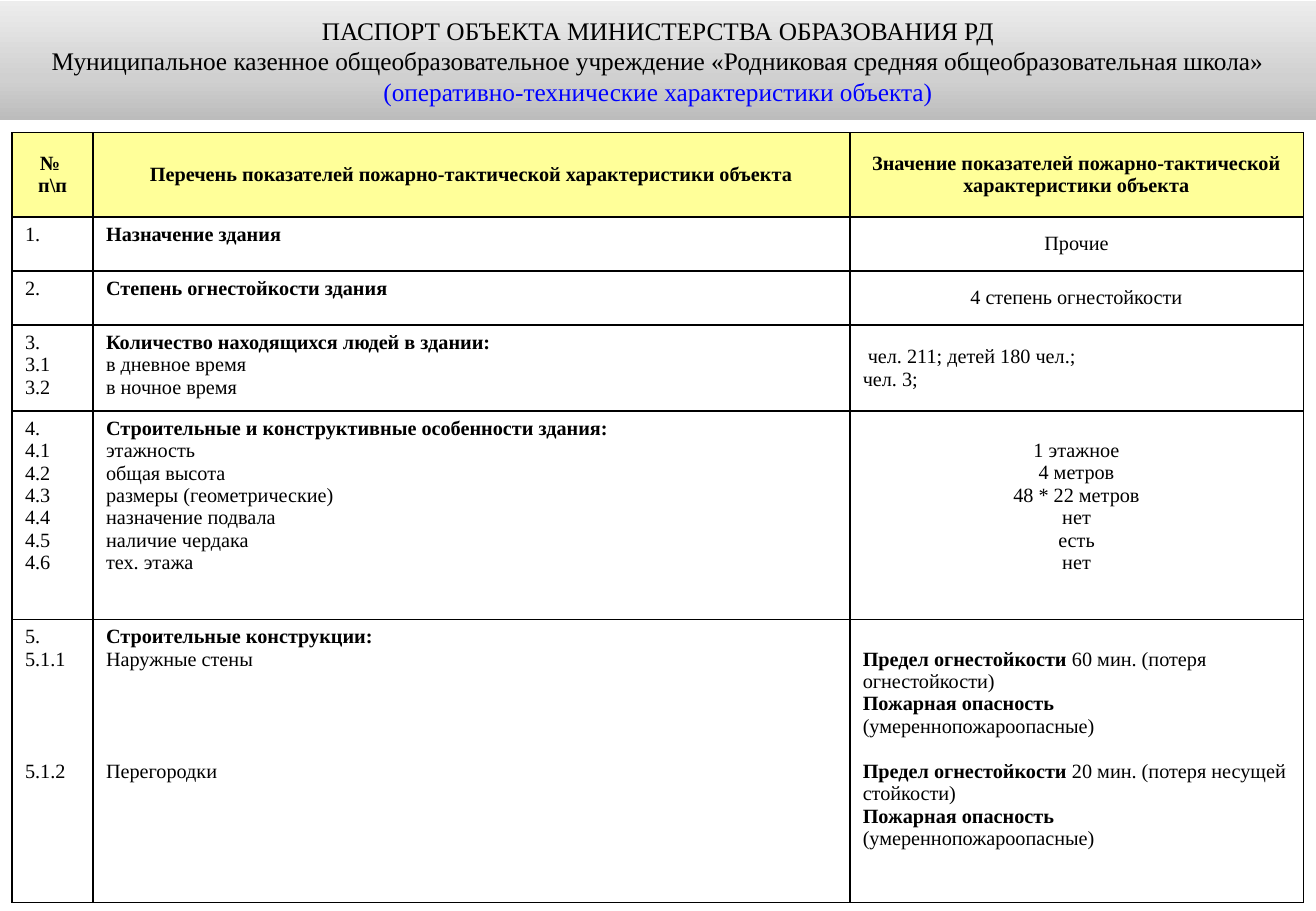
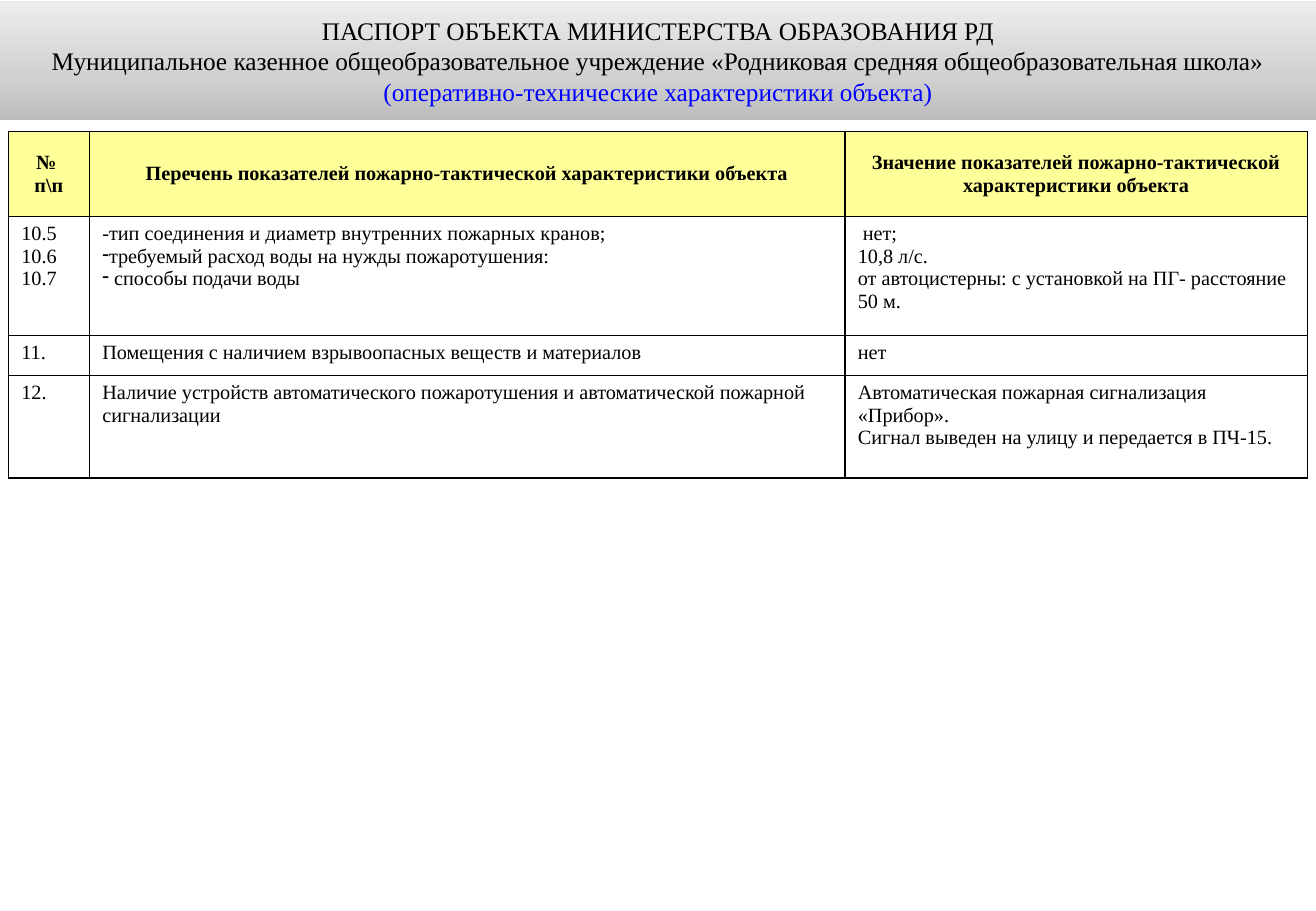
from pptx import Presentation
from pptx.dml.color import RGBColor
from pptx.enum.shapes import MSO_SHAPE
from pptx.enum.text import MSO_ANCHOR, PP_ALIGN
from pptx.oxml import parse_xml
from pptx.oxml.ns import nsdecls
from pptx.util import Pt

BLACK = RGBColor(0, 0, 0)
BLUE = RGBColor(0, 0, 255)
WHITE = RGBColor(255, 255, 255)
YELLOW = RGBColor(255, 255, 153)
BAND_STOPS = [(0, RGBColor(188, 188, 188)), (35, RGBColor(208, 208, 208)), (100, RGBColor(237, 237, 237))]
FONT = "Times New Roman"
SLIDE_WIDTH, SLIDE_HEIGHT = 780, 540
BAND_TOP, BAND_HEIGHT = 0.6, 70.6
TITLE_SIZE, TABLE_SIZE = 15, 12
LINE = 13.3
MARGIN_X, MARGIN_Y = 7.7, 3.6
BULLET = "•"

TITLE = [
    ("ПАСПОРТ ОБЪЕКТА МИНИСТЕРСТВА ОБРАЗОВАНИЯ РД", BLACK),
    ("Муниципальное казенное общеобразовательное учреждение «Родниковая средняя общеобразовательная школа»", BLACK),
    ("(оперативно-технические характеристики объекта)", BLUE),
]
HEADER = [
    ["№ ", "п\\п"],
    ["Перечень показателей пожарно-тактической характеристики объекта"],
    ["Значение показателей пожарно-тактической характеристики объекта"],
]
LIMIT, DANGER, MODERATE = "Предел огнестойкости ", "Пожарная опасность", "(умереннопожароопасные)"

BUILDING = {
    "at": (7.2, 78.7),
    "columns": [48, 448.5, 268.8],
    "rows": [50, 32, 32, 51, 123.6, 167.8],
    "centred": {(1, 2), (2, 2), (4, 2)},
    "middle": {(1, 2), (2, 2), (3, 2)},
    "cells": [
        [["1."], [("Назначение здания", "")], ["Прочие"]],
        [["2."], [("Степень огнестойкости здания", "")], ["4 степень огнестойкости"]],
        [
            ["3.", "3.1", "3.2"],
            [("Количество находящихся людей в здании:", ""), "в дневное время", "в ночное время"],
            [" чел. 211; детей 180 чел.;", "чел. 3;"],
        ],
        [
            ["4.", "4.1", "4.2", "4.3", "4.4", "4.5", "4.6"],
            [("Строительные и конструктивные особенности здания:", ""), "этажность", "общая высота",
             "размеры (геометрические)", "назначение подвала", "наличие чердака", "тех. этажа"],
            [1, "1 этажное", "4 метров", "48 * 22 метров", "нет", "есть", "нет"],
        ],
        [
            ["5.", "5.1.1", 4, "5.1.2"],
            [("Строительные конструкции:", ""), "Наружные стены", 4, "Перегородки"],
            [1, (LIMIT, "60 мин. (потеря огнестойкости)"), (DANGER + " ", MODERATE),
             1, (LIMIT, "20 мин. (потеря несущей стойкости)"), (DANGER, ""), MODERATE],
        ],
    ],
}
WATER_SUPPLY = {
    "at": (5, 78),
    "columns": [48, 447.8, 274.2],
    "rows": [50.4, 70.6, 23.6, 60.8],
    "centred": set(),
    "middle": set(),
    "cells": [
        [
            ["10.5", "10.6", "10.7"],
            ["-тип соединения и диаметр внутренних пожарных кранов;",
             BULLET + "требуемый расход воды на нужды пожаротушения:", BULLET + " способы подачи воды"],
            [" нет;", "10,8 л/с.", "от автоцистерны: с установкой на ПГ- расстояние 50 м."],
        ],
        [["11."], ["Помещения с наличием взрывоопасных веществ и материалов"], ["нет"]],
        [
            ["12."],
            ["Наличие устройств автоматического пожаротушения и автоматической пожарной сигнализации"],
            ["Автоматическая пожарная сигнализация", "«Прибор».",
             "Сигнал выведен на улицу и передается в ПЧ-15."],
        ],
    ],
}


def add_run(paragraph, text, size, color=BLACK, bold=False):
    run = paragraph.add_run()
    run.text = text
    font = run.font
    font.name, font.size, font.bold = FONT, Pt(size), bold
    font.color.rgb = color


def next_paragraph(frame, index):
    return frame.add_paragraph() if index else frame.paragraphs[0]


def add_title_band(slide):
    band = slide.shapes.add_shape(MSO_SHAPE.RECTANGLE, 0, Pt(BAND_TOP), Pt(SLIDE_WIDTH), Pt(BAND_HEIGHT))
    band.shadow.inherit = False
    band.line.fill.background()
    band.fill.gradient()
    band.fill.gradient_angle = 90
    stops = band.fill._fill._gradFill.gsLst
    for stop in list(stops):
        stops.remove(stop)
    for position, color in BAND_STOPS:
        stops.append(parse_xml(
            f'<a:gs {nsdecls("a")} pos="{position * 1000}"><a:srgbClr val="{color}"/></a:gs>'))
    frame = band.text_frame
    frame.word_wrap = True
    frame.vertical_anchor = MSO_ANCHOR.MIDDLE
    for index, (text, color) in enumerate(TITLE):
        paragraph = next_paragraph(frame, index)
        paragraph.alignment = PP_ALIGN.CENTER
        paragraph.line_spacing = Pt(18)
        add_run(paragraph, text, TITLE_SIZE, color)


def add_borders(cell):
    properties = cell._tc.get_or_add_tcPr()
    for side in "LRTB":
        properties.append(parse_xml(
            f'<a:ln{side} {nsdecls("a")} w="{Pt(1)}"><a:solidFill>'
            f'<a:srgbClr val="{BLACK}"/></a:solidFill></a:ln{side}>'))


def fill_cell(cell, lines, fill, centred, middle, header):
    add_borders(cell)
    cell.fill.solid()
    cell.fill.fore_color.rgb = fill
    cell.margin_left = cell.margin_right = Pt(MARGIN_X)
    cell.margin_top = cell.margin_bottom = Pt(MARGIN_Y)
    cell.vertical_anchor = MSO_ANCHOR.MIDDLE if middle else MSO_ANCHOR.TOP
    count = gap = 0
    for line in lines:
        if isinstance(line, int):
            gap = line * LINE
            continue
        paragraph = next_paragraph(cell.text_frame, count)
        paragraph.alignment = PP_ALIGN.CENTER if centred else PP_ALIGN.LEFT
        if gap and count:
            paragraph.space_before = Pt(gap)
        elif gap:
            cell.margin_top = Pt(MARGIN_Y + gap)
        count, gap = count + 1, 0
        strong, plain = line if isinstance(line, tuple) else ("", line)
        if plain.startswith(BULLET):
            plain = plain[len(BULLET):]
            paragraph._p.get_or_add_pPr().append(parse_xml(f'<a:buChar {nsdecls("a")} char="-"/>'))
        for text, bold in ((strong, True), (plain, header)):
            if text:
                add_run(paragraph, text, TABLE_SIZE, bold=bold)


def add_passport_table(slide, content):
    columns, rows = content["columns"], content["rows"]
    left, top = content["at"]
    table = slide.shapes.add_table(
        len(rows), len(columns), Pt(left), Pt(top), Pt(sum(columns)), Pt(sum(rows))).table
    table.first_row = table.horz_banding = False
    for column, width in zip(table.columns, columns):
        column.width = Pt(width)
    for row, height in zip(table.rows, rows):
        row.height = Pt(height)
    for row, texts in enumerate([HEADER] + content["cells"]):
        header = row == 0
        for column, lines in enumerate(texts):
            place = (row, column)
            fill_cell(table.cell(row, column), lines, YELLOW if header else WHITE,
                      header or place in content["centred"], header or place in content["middle"], header)


def main():
    """Build the two fire-safety passport slides."""
    presentation = Presentation()
    presentation.slide_width, presentation.slide_height = Pt(SLIDE_WIDTH), Pt(SLIDE_HEIGHT)
    for content in (BUILDING, WATER_SUPPLY):
        slide = presentation.slides.add_slide(presentation.slide_layouts[6])
        add_passport_table(slide, content)
        add_title_band(slide)
    presentation.save("out.pptx")


if __name__ == "__main__":
    main()
